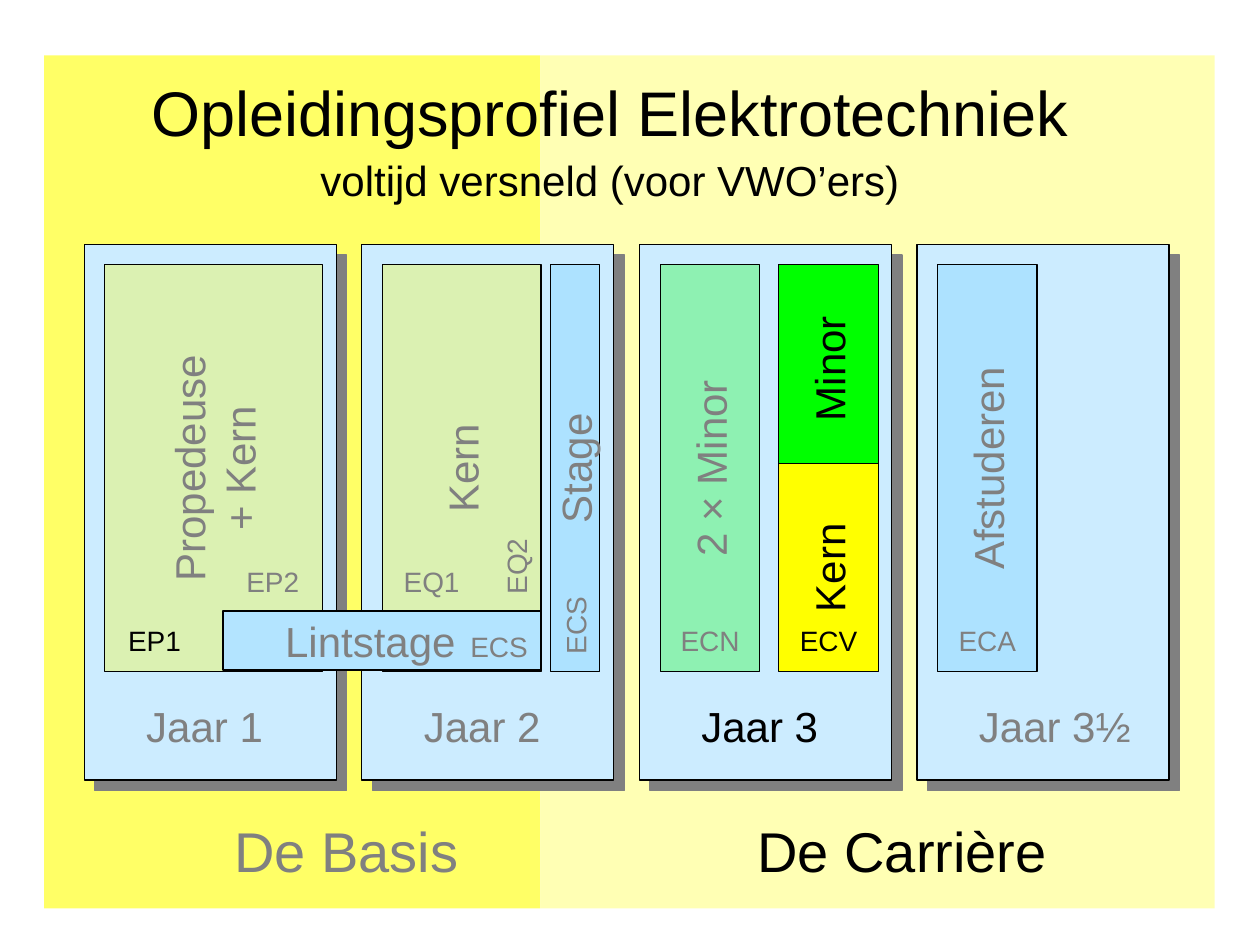
"""Build the study profile slide for Elektrotechniek."""
from lxml import etree
from pptx import Presentation
from pptx.dml.color import RGBColor
from pptx.enum import shapes, text
from pptx.oxml import ns
from pptx.util import Pt

BLACK = RGBColor(0x00, 0x00, 0x00)
GREY = RGBColor(0x80, 0x80, 0x80)
CREAM = RGBColor(0xFF, 0xFF, 0xB4)
LEMON = RGBColor(0xFF, 0xFF, 0x66)
PALE_BLUE = RGBColor(0xCC, 0xEC, 0xFF)
RIBBON_BLUE = RGBColor(0xB3, 0xE4, 0xFF)
SKY = RGBColor(0x66, 0xCC, 0xFF)
YELLOW = RGBColor(0xFF, 0xFF, 0x00)
GREEN = RGBColor(0x00, 0xFF, 0x00)

YEARS = [("Jaar 1", GREY), ("Jaar 2", GREY), ("Jaar 3", BLACK), ("Jaar 3½", GREY)]
BLOCK_TOP, BLOCK_HEIGHT, HALF_HEIGHT = 151.2, 232.6, 118.8
BLOCKS = [
    ("Afstuderen", 535.7, 56.9, SKY),
    ("Propedeuse\n+ Kern", 59.8, 124.6, YELLOW),
    ("Kern", 218.5, 90.7, YELLOW),
    ("Stage", 314.6, 28.1, SKY),
    ("2 × Minor", 377.3, 56.9, GREEN),
]
CODES = [
    ("EP1", 59.8, 349.2, BLACK),
    ("EP2", 127.4, 315.4, GREY),
    ("EQ1", 218.2, 315.4, GREY),
    ("ECN", 377.3, 349.2, GREY),
    ("ECA", 535.7, 349.2, GREY),
    ("ECV", 445, 349.2, BLACK),
]
UPRIGHT_CODES = [("ECS", 314.6, 331.9), ("EQ2", 280.8, 298.1)]


class Painter:
    """Hold the style and the page, and draw each kind of element."""

    font_name = "Arial"
    line_width = Pt(0.75)

    def __init__(self, page):
        self.page = page

    def letter(self, box, words, size, color, align=text.PP_ALIGN.CENTER, **frame_format):
        """Fill a text frame and format it."""
        frame = box.text_frame
        frame.text = words
        values = {"word_wrap": False, "auto_size": text.MSO_AUTO_SIZE.NONE,
                  "vertical_anchor": text.MSO_ANCHOR.MIDDLE, **frame_format}
        for name, value in values.items():
            setattr(frame, name, value)
        for para in frame.paragraphs:
            para.alignment = align
            para.space_before = Pt(0)
            for name, value in {"name": self.font_name, "size": Pt(size)}.items():
                setattr(para.font, name, value)
            para.font.color.rgb = color

    def place(self, box, left, top, width, height, upright=False):
        """Put a box in its visible frame, turned a quarter if upright."""
        if upright:
            left, top = left + (width - height) / 2, top + (height - width) / 2
            width, height = height, width
            box.rotation = 270
        values = {"left": left, "top": top, "width": width, "height": height}
        for name, value in values.items():
            setattr(box, name, Pt(value))

    def rectangle(self, frame, color, outlined=True, upright=False, alpha=None):
        """Draw a rectangle."""
        box = self.page.shapes.add_shape(shapes.MSO_SHAPE.RECTANGLE, 0, 0, 0, 0)
        self.place(box, *frame, upright=upright)
        box.shadow.inherit = False
        box.fill.solid()
        box.fill.fore_color.rgb = color
        if alpha:
            tint = box.element.spPr.find(".//" + ns.qn("a:srgbClr"))
            etree.SubElement(tint, ns.qn("a:alpha"), val=str(alpha * 1000))
        if outlined:
            box.line.color.rgb = BLACK
            box.line.width = self.line_width
        else:
            box.line.fill.background()
        return box

    def shadow(self, box):
        """Give a box a hard grey shadow to the lower right."""
        effects = box.element.spPr.find(ns.qn("a:effectLst"))
        outer = etree.SubElement(effects, ns.qn("a:outerShdw"), dist=str(Pt(8.5)),
                                 dir="2700000", algn="ctr", rotWithShape="0")
        etree.SubElement(outer, ns.qn("a:srgbClr"), val=str(GREY))

    def label(self, words, frame, size, color, upright=False, **text_format):
        """Draw a text box."""
        box = self.page.shapes.add_textbox(0, 0, 0, 0)
        self.place(box, *frame, upright=upright)
        self.letter(box, words, size, color, **text_format)

    def heading(self, box, words, frame, size):
        """Move a placeholder to the front and fill it."""
        self.page.shapes.element.append(box.element)
        self.place(box, *frame)
        self.letter(box, words, size, BLACK, word_wrap=True)

    def year(self, words, left, color):
        """Draw the panel of one year with its name."""
        self.shadow(self.rectangle((left, 139.7, 144, 306), PALE_BLUE))
        self.label(words, (left + 28.3, 396.7, 81.4, 36), 24, color,
                   align=text.PP_ALIGN.LEFT, vertical_anchor=text.MSO_ANCHOR.TOP)

    def block(self, words, frame, color, ink, alpha=None):
        """Draw an upright course block."""
        box = self.rectangle(frame, color, upright=True, alpha=alpha)
        self.letter(box, words, 24, ink)


def main():
    """Draw the slide and save it."""
    deck = Presentation()
    deck.slide_width, deck.slide_height = Pt(720), Pt(540)
    page = deck.slides.add_slide(deck.slide_layouts[0])
    painter = Painter(page)
    title, subtitle = page.placeholders

    painter.rectangle((308.9, 31.7, 385.2, 487.4), CREAM, outlined=False)
    painter.rectangle((25.2, 31.7, 283.7, 487.4), LEMON, outlined=False)
    for index, (words, color) in enumerate(YEARS):
        painter.year(words, 48.2 + 158.6 * index, color)

    painter.heading(title, "Opleidingsprofiel Elektrotechniek", (42.5, 43.2, 612, 40.3), 36)
    painter.heading(subtitle, "voltijd versneld (voor VWO’ers)", (42.5, 82.8, 612, 40.3), 24)
    for words, left, color in [("De Carrière", 405.4, BLACK), ("De Basis", 87.8, GREY)]:
        painter.label(words, (left, 463, 220.3, 45.4), 32, color, word_wrap=True,
                      vertical_anchor=text.MSO_ANCHOR.TOP)

    for words, left, width, color in BLOCKS:
        painter.block(words, (left, BLOCK_TOP, width, BLOCK_HEIGHT), color, GREY, alpha=30)
    for words, top, color in [("Minor", BLOCK_TOP, GREEN),
                              ("Kern", BLOCK_TOP + BLOCK_HEIGHT - HALF_HEIGHT, YELLOW)]:
        painter.block(words, (445, top, 56.9, HALF_HEIGHT), color, BLACK)

    for words, left, top, color in CODES:
        painter.label(words, (left, top, 56.9, 33.8), 16, color)
    for words, left, top in UPRIGHT_CODES:
        painter.label(words, (left, top, 28.1, 51.1), 16, GREY, upright=True)

    ribbon = painter.rectangle((127.4, 349.2, 181.4, 33.8), RIBBON_BLUE)
    painter.letter(ribbon, "Lintstage", 24, GREY, margin_right=Pt(20))
    painter.label("ECS", (257.8, 355, 54.7, 28.1), 16, GREY)

    deck.save("out.pptx")


if __name__ == "__main__":
    main()
